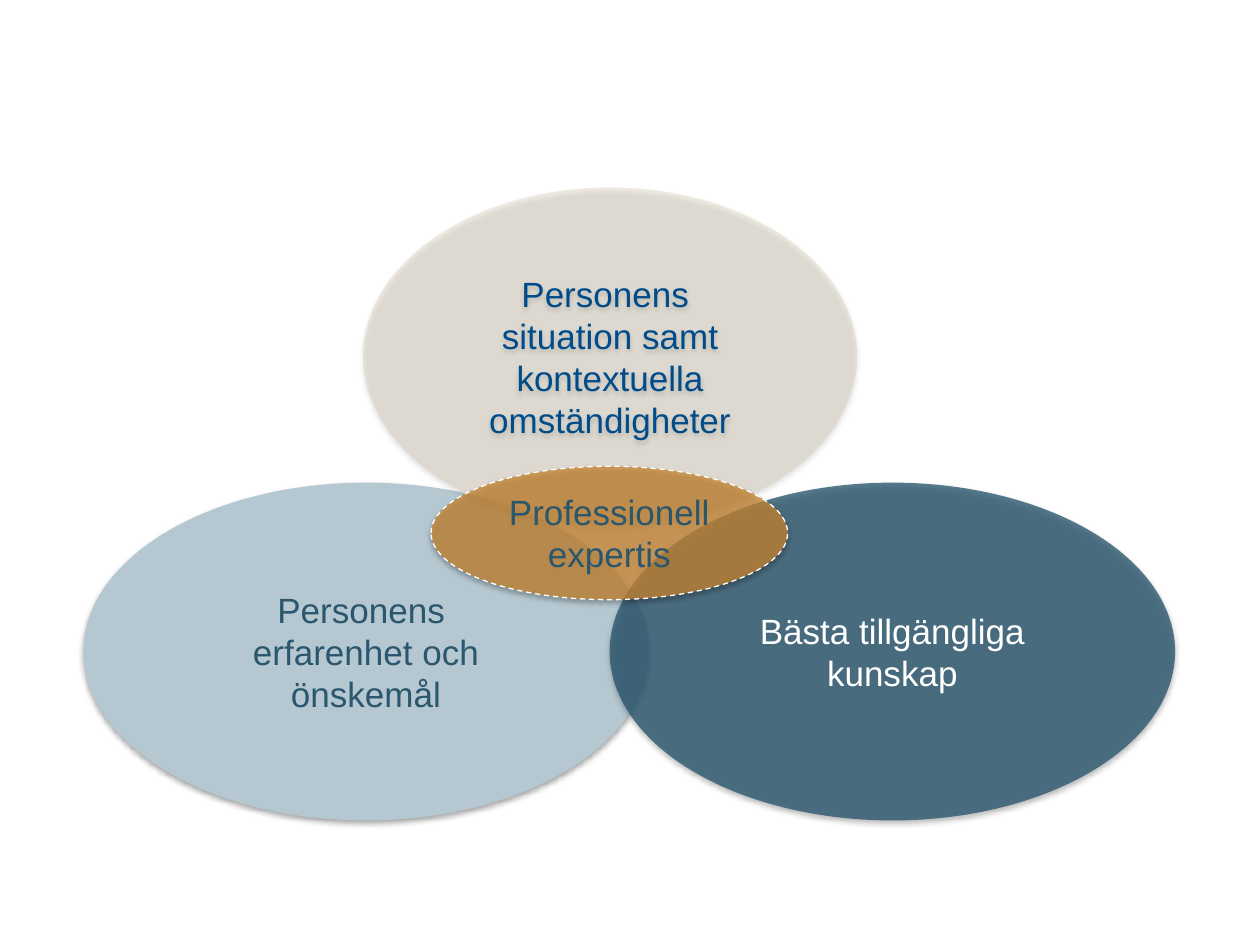
import pptx
import pptx.dml.color
import pptx.enum.dml
import pptx.enum.shapes
import pptx.enum.text
import pptx.oxml
import pptx.oxml.ns
import pptx.util

Cm = pptx.util.Cm
Pt = pptx.util.Pt

COLORS = {
    "mist": "B5C8D1",
    "petrol": "2A566E",
    "sand": "D4C9B0",
    "ochre": "C78734",
    "blue": "004B89",
    "white": "FFFFFF",
}


def rgb(name):
    return pptx.dml.color.RGBColor.from_string(COLORS[name])


class VennSlide:
    font = "Arial"
    size = Pt(20)

    def __init__(self, prs):
        self.slide = prs.slides.add_slide(prs.slide_layouts[6])

    def ellipse(self, box, text, fill, color, opacity=100, outline=None):
        """Add a labelled oval; box is left, top, width, height in cm."""
        sp = self.slide.shapes.add_shape(
            pptx.enum.shapes.MSO_SHAPE.OVAL, *(Cm(v) for v in box))
        sp.fill.solid()
        sp.fill.fore_color.rgb = rgb(fill)
        if opacity < 100:
            self.set_opacity(sp, opacity)
        if outline:
            sp.line.color.rgb = rgb(outline)
            sp.line.width = Pt(0.75)
            sp.line.dash_style = pptx.enum.dml.MSO_LINE.DASH
        else:
            sp.line.fill.background()
        self.add_shadow(sp)
        self.label(sp.text_frame, text, color)

    def label(self, tf, text, color):
        tf.text = text
        tf.word_wrap = True
        tf.vertical_anchor = pptx.enum.text.MSO_ANCHOR.MIDDLE
        for p in tf.paragraphs:
            p.alignment = pptx.enum.text.PP_ALIGN.CENTER
            for r in p.runs:
                r.font.name = self.font
                r.font.size = self.size
                r.font.color.rgb = rgb(color)

    def set_opacity(self, sp, percent):
        clr = sp._element.spPr.find(pptx.oxml.ns.qn("a:solidFill"))[0]
        clr.append(pptx.oxml.parse_xml(
            f'<a:alpha {pptx.oxml.ns.nsdecls("a")} val="{percent * 1000}"/>'))

    def add_shadow(self, sp):
        """Give the shape a soft shadow straight below it."""
        sp.shadow.inherit = False
        effects = sp._element.spPr.find(pptx.oxml.ns.qn("a:effectLst"))
        effects.append(pptx.oxml.parse_xml(
            f'<a:outerShdw {pptx.oxml.ns.nsdecls("a")} blurRad="{Pt(3.1)}" '
            f'dist="{Pt(1.8)}" dir="5400000" rotWithShape="0">'
            '<a:srgbClr val="000000"><a:alpha val="35000"/></a:srgbClr>'
            '</a:outerShdw>'))


def main():
    prs = pptx.Presentation()
    prs.slide_width, prs.slide_height = Cm(25.4), Cm(19.05)
    s = VennSlide(prs)
    s.ellipse((1.68, 9.73, 11.4, 6.81), "Personens \nerfarenhet och önskemål",
              "mist", "petrol")
    s.ellipse((12.29, 9.73, 11.4, 6.81), "Bästa tillgängliga kunskap",
              "petrol", "white", opacity=78)
    s.ellipse((7.32, 3.78, 9.96, 6.81),
              "Personens \nsituation samt kontextuella omständigheter",
              "sand", "blue", opacity=33)
    s.ellipse((8.69, 9.4, 7.19, 2.69), "Professionell expertis",
              "ochre", "petrol", opacity=76, outline="white")
    prs.save("out.pptx")


if __name__ == "__main__":
    main()
